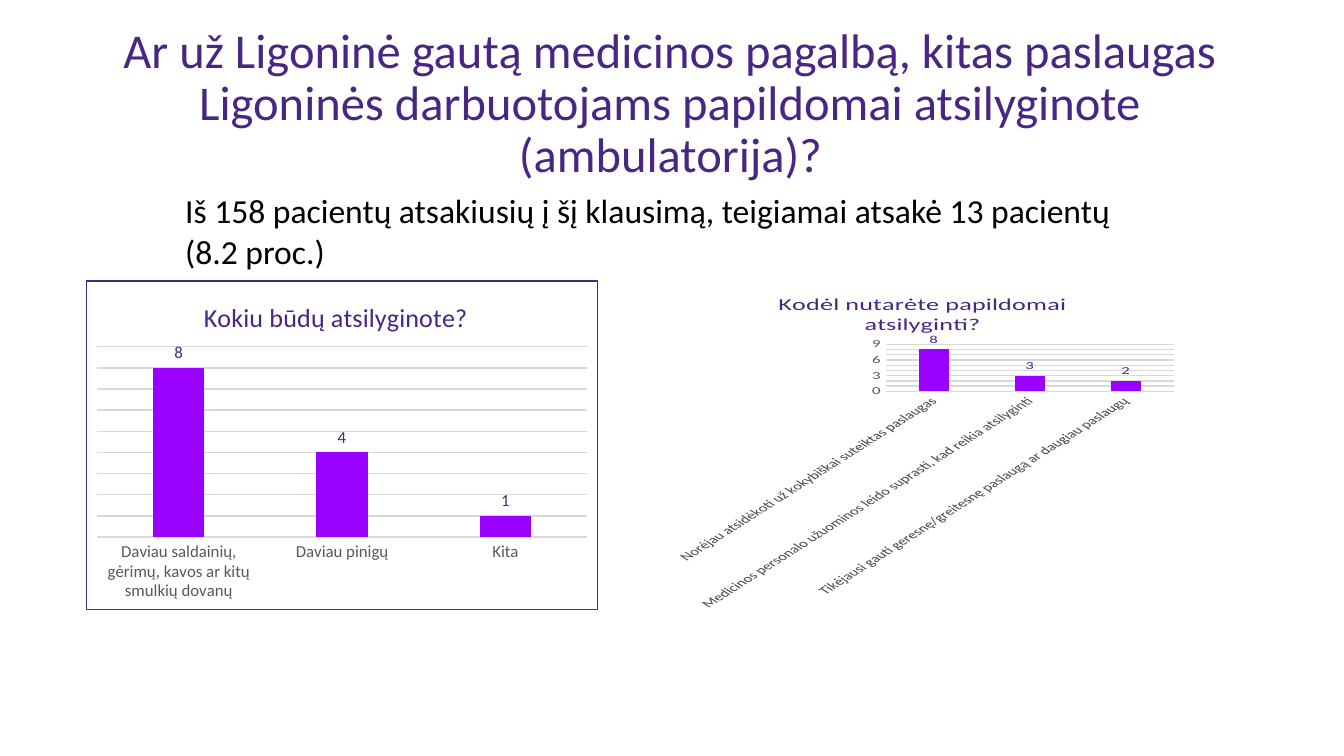
from lxml.etree import SubElement
from pptx import Presentation
from pptx.chart.data import CategoryChartData
from pptx.dml.color import RGBColor
from pptx.enum.chart import XL_CHART_TYPE, XL_LABEL_POSITION, XL_TICK_MARK
from pptx.enum.text import MSO_ANCHOR, MSO_AUTO_SIZE, PP_ALIGN
from pptx.oxml import parse_xml
from pptx.oxml.ns import nsdecls, qn
from pptx.util import Inches, Pt

THEME = {
    "font": "Calibri",
    "ink": "482683", "text": "000000", "bar": "9900FF",
    "axis": "595959", "grid": "D9D9D9",
    "title": 26, "body": 18, "head": 14, "base": 10, "label": 9,
}
WIDE = Inches(10)
HIGH = WIDE * 9 // 16
COL, ROW = WIDE / 1000, HIGH / 1000


def style(font, size, color):
    font.name = THEME["font"]
    font.size = Pt(THEME[size])
    font.bold = False
    font.color.rgb = RGBColor.from_string(THEME[color])


def area(x, y, w, h):
    """Turn thousandths of the slide into left, top, width and height."""
    return int(x * COL), int(y * ROW), int(w * COL), int(h * ROW)


deck = Presentation()
deck.slide_width, deck.slide_height = WIDE, HIGH
slide = deck.slides.add_slide(deck.slide_layouts[5])

# Title
title = slide.shapes.title
title.left, title.top, title.width, title.height = area(68, 99, 862, 156)
frame = title.text_frame
frame.text = ("Ar už Ligoninė gautą medicinos pagalbą, kitas paslaugas "
              "Ligoninės darbuotojams papildomai atsilyginote (ambulatorija)?")
frame.auto_size = MSO_AUTO_SIZE.NONE
frame.vertical_anchor = MSO_ANCHOR.MIDDLE
frame.margin_bottom = Inches(0.48)
frame.paragraphs[0].alignment = PP_ALIGN.CENTER
frame.paragraphs[0].line_spacing = 0.9
style(frame.paragraphs[0].runs[0].font, "title", "ink")

# Summary
note = slide.shapes.add_textbox(*area(128, 243, 746, 126)).text_frame
note.word_wrap = True
note.text = ("Iš 158 pacientų atsakiusių į šį klausimą, "
             "teigiamai atsakė 13 pacientų (8.2 proc.)")
style(note.paragraphs[0].runs[0].font, "body", "text")

# Charts: left, width, heading, answers, framed
charts = [
    (64, 381, "Kokiu būdų atsilyginote?",
     {"Daviau saldainių, gėrimų, kavos ar kitų smulkių dovanų": 8,
      "Daviau pinigų": 4,
      "Kita": 1}, True),
    (492, 389, "Kodėl nutarėte papildomai atsilyginti?",
     {"Norėjau atsidėkoti už kokybiškai suteiktas paslaugas": 8,
      "Medicinos personalo užuominos leido suprasti, kad reikia atsilyginti": 3,
      "Tikėjausi gauti geresnę/greitesnę paslaugą ar daugiau paslaugų": 2}, False),
]
for left, width, head, answers, framed in charts:
    data = CategoryChartData()
    data.categories = list(answers)
    data.add_series("Series 1", list(answers.values()))
    chart = slide.shapes.add_chart(
        XL_CHART_TYPE.COLUMN_CLUSTERED, *area(left, 371, width, 436), data).chart
    style(chart.font, "base", "text")
    chart.has_legend = False
    chart.has_title = True
    text = chart.chart_title.text_frame
    text.text = head
    style(text.paragraphs[0].runs[0].font, "head", "ink")
    chart.chart_title.include_in_layout = False

    plot = chart.plots[0]
    plot.gap_width, plot.overlap = 219, -27
    plot.vary_by_categories = False
    fill = plot.series[0].format.fill
    fill.solid()
    fill.fore_color.rgb = RGBColor.from_string(THEME["bar"])
    plot.has_data_labels = True
    plot.data_labels.show_value = True
    plot.data_labels.position = XL_LABEL_POSITION.OUTSIDE_END
    style(plot.data_labels.font, "label", "ink")

    cats, vals = chart.category_axis, chart.value_axis
    for axis in cats, vals:
        axis.major_tick_mark = axis.minor_tick_mark = XL_TICK_MARK.NONE
        style(axis.tick_labels.font, "label", "axis")
        axis.tick_labels.font._element.getparent().getparent().getparent().find(
            qn("a:bodyPr")).set("rot", "-60000000")
    vals.minimum_scale, vals.maximum_scale, vals.major_unit = 0, 9, 1
    vals.has_major_gridlines = True
    vals.format.line.fill.background()
    vals.visible = not framed
    for line in cats.format.line, vals.major_gridlines.format.line:
        line.width = Pt(0.75)
        line.color.rgb = RGBColor.from_string(THEME["grid"])

    # Chart border, and fixed places for the framed chart's parts
    body = chart._chartSpace.find(qn("c:chart"))
    paint = (f'<a:solidFill><a:srgbClr val="{THEME["ink"]}"/></a:solidFill>'
             if framed else "<a:noFill/>")
    body.addnext(parse_xml(
        f'<c:spPr {nsdecls("c", "a")}><a:noFill/>'
        f'<a:ln w="{Pt(0.75)}">{paint}</a:ln></c:spPr>'))
    if framed:
        spots = [
            (body.find(qn("c:title")), 1, {"x": 0.22, "y": 0.04}),
            (body.find(qn("c:plotArea")), 0,
             {"x": 0.02, "y": 0.2, "w": 0.96, "h": 0.58}),
        ]
        for part, index, spot in spots:
            for old in part.findall(qn("c:layout")):
                part.remove(old)
            layout = parse_xml(f'<c:layout {nsdecls("c")}/>')
            part.insert(index, layout)
            manual = SubElement(layout, qn("c:manualLayout"))
            if "w" in spot:
                SubElement(manual, qn("c:layoutTarget")).set("val", "inner")
            for key in "x", "y":
                SubElement(manual, qn(f"c:{key}Mode")).set("val", "edge")
            for key, share in spot.items():
                SubElement(manual, qn(f"c:{key}")).set("val", str(share))

deck.save("out.pptx")
